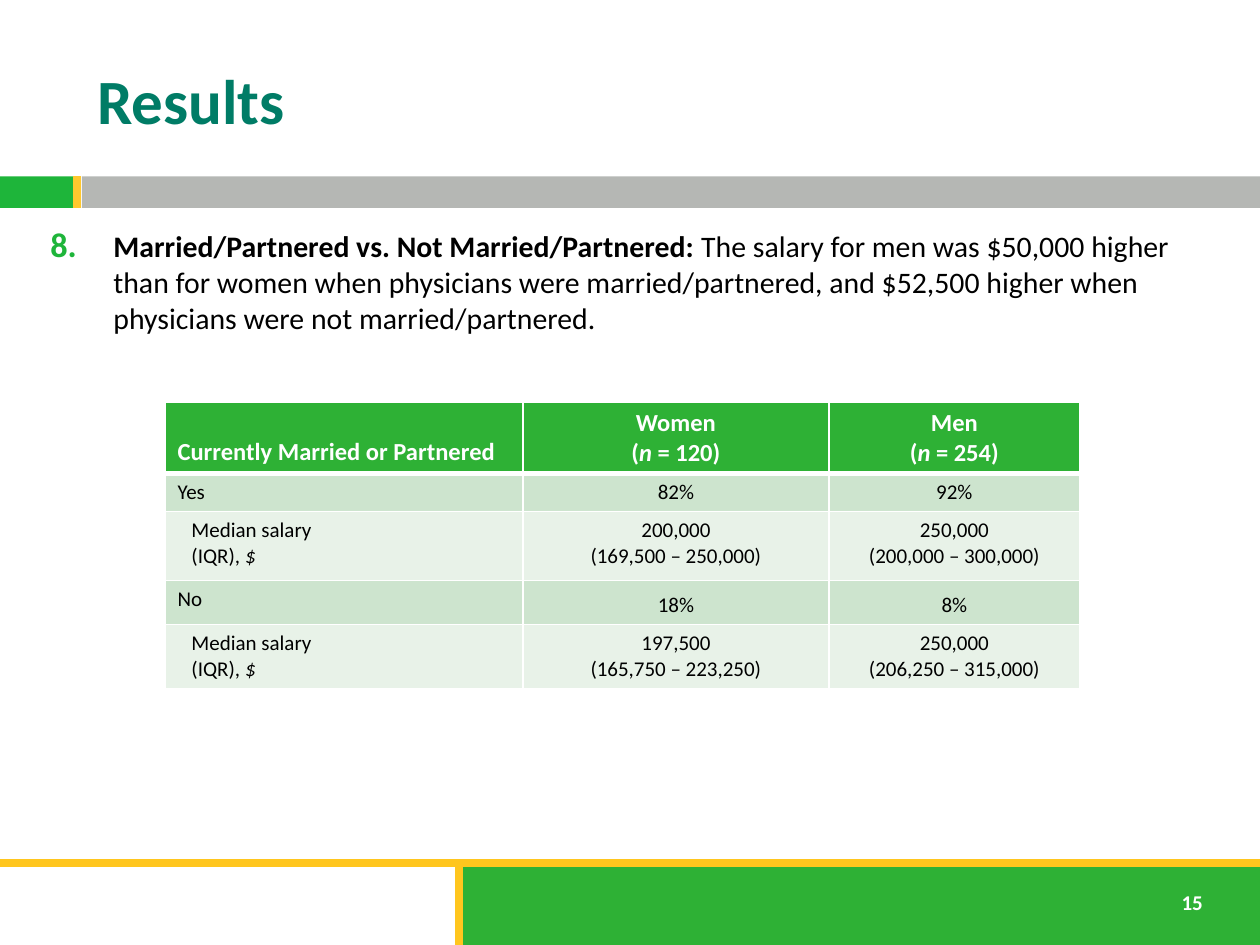
"""Build the results slide on salary by partner status."""
from dataclasses import dataclass
from typing import Any

from lxml.etree import SubElement
from pptx import Presentation
from pptx.dml.color import RGBColor
from pptx.enum.shapes import MSO_CONNECTOR, MSO_SHAPE
from pptx.enum.text import MSO_ANCHOR, MSO_AUTO_SIZE, PP_ALIGN
from pptx.oxml.ns import qn
from pptx.util import Inches, Pt

GREEN, LIME, GOLD, AMBER = "2EB135", "1EB53A", "FFC61E", "FFC82E"
GRAY, TEAL, WHITE, BLACK = "B5B7B4", "007C66", "FFFFFF", "000000"
MINT, PALE = "CDE4CE", "E8F2E8"
HEAD = {"name": "Calibri", "size": Pt(14), "bold": True, "color": WHITE}
CELL = {"name": "Calibri", "size": Pt(12), "bold": False, "color": BLACK}
TITLE = {"name": "Calibri", "size": Pt(36), "bold": True, "color": TEAL}
LEAD = {"name": "Calibri", "size": Pt(17), "bold": True, "color": BLACK}
PAGE = {**HEAD, "size": Pt(12)}
TOP, LOW = MSO_ANCHOR.TOP, MSO_ANCHOR.BOTTOM


@dataclass
class Band:
    """A filled bar."""
    box: tuple[float, float, float, float]
    color: str


@dataclass
class Rule:
    """A straight line from one point to the next."""
    ends: tuple[float, float, float, float]
    color: str


@dataclass
class Row:
    """A table row with its look."""
    high: float
    texts: tuple[str, str, str]
    fill: str
    font: dict[str, Any]
    anchors: tuple[Any, Any, Any]
    inset: float = 0.1


BANDS = [Band((0, 1.4, 0.58, 0.25), LIME), Band((0.65, 1.4, 9.35, 0.25), GRAY),
         Band((3.62, 6.84, 6.38, 0.66), GREEN)]
RULES = [Rule((0, 6.85, 10, 6.85), GOLD), Rule((3.64, 6.86, 3.64, 7.5), GOLD),
         Rule((0.61, 1.4, 0.61, 1.65), AMBER)]
MEDIAN = "Median salary\n(IQR), *$*"
WIDTHS = (2.84, 2.43, 1.99)
ROWS = [
    Row(0.56, ("Currently Married or Partnered", "Women\n(*n* = 120)", "Men\n(*n* = 254)"),
        GREEN, HEAD, (LOW, TOP, TOP)),
    Row(0.3, ("Yes", "82%", "92%"), MINT, CELL, (TOP, LOW, LOW)),
    Row(0.55, (MEDIAN, "200,000\n(169,500 – 250,000)", "250,000\n(200,000 – 300,000)"),
        PALE, CELL, (TOP, TOP, TOP), 0.21),
    Row(0.35, ("No", "18%", "8%"), MINT, CELL, (TOP, LOW, LOW)),
    Row(0.51, (MEDIAN, "197,500\n(165,750 – 223,250)", "250,000\n(206,250 – 315,000)"),
        PALE, CELL, (TOP, TOP, TOP), 0.21),
]


def paint(target: Any, color: str) -> None:
    """Give a fill or font its colour."""
    if hasattr(target, "solid"):
        target.solid()
        target.fore_color.rgb = RGBColor.from_string(color)
    else:
        target.color.rgb = RGBColor.from_string(color)


def add_run(para: Any, text: str, form: dict[str, Any]) -> None:
    """Add a run in the given format."""
    run = para.add_run()
    run.text = text
    for name, value in form.items():
        if name == "color":
            paint(run.font, value)
        else:
            setattr(run.font, name, value)


def place(shape: Any, box: tuple[float, ...]) -> None:
    """Move and size a shape."""
    for name, value in zip(("left", "top", "width", "height"), box):
        setattr(shape, name, Inches(value))


def draw_band(slide: Any, band: Band) -> None:
    """Draw a filled bar."""
    shape = slide.shapes.add_shape(MSO_SHAPE.RECTANGLE, *map(Inches, band.box))
    shape.shadow.inherit = False
    shape.line.fill.background()
    paint(shape.fill, band.color)


def draw_rule(slide: Any, rule: Rule) -> None:
    """Draw a thick line."""
    line = slide.shapes.add_connector(MSO_CONNECTOR.STRAIGHT, *map(Inches, rule.ends))
    line.line.width = Pt(4.5)
    paint(line.line.fill, rule.color)
    SubElement(line._element.spPr, qn("a:effectLst"))


def add_edges(cell: Any, index: int) -> None:
    """Add white cell borders, thick below the head row."""
    thick = {0: "lnB", 1: "lnT"}.get(index)
    for side in ("lnL", "lnR", "lnT", "lnB"):
        width = Pt(3 if side == thick else 1)
        edge = SubElement(cell._tc.get_or_add_tcPr(), qn(f"a:{side}"), w=str(width))
        SubElement(SubElement(edge, qn("a:solidFill")), qn("a:srgbClr"), val=WHITE)


def fill_cell(cell: Any, row: Row, index: int, col: int) -> None:
    """Write and style one cell, with starred parts in italics."""
    add_edges(cell, index)
    paint(cell.fill, row.fill)
    cell.vertical_anchor = row.anchors[col]
    cell.margin_left = Inches(0.1 if col else row.inset)
    frame = cell.text_frame
    for num, line in enumerate(row.texts[col].split("\n")):
        para = frame.add_paragraph() if num else frame.paragraphs[0]
        para.alignment = PP_ALIGN.CENTER if col else PP_ALIGN.LEFT
        for part, text in enumerate(line.split("*")):
            if text:
                add_run(para, text, {**row.font, "italic": part % 2 == 1})


def draw_table(slide: Any) -> None:
    """Draw the salary table."""
    box = (1.31, 3.19, sum(WIDTHS), sum(row.high for row in ROWS))
    table = slide.shapes.add_table(len(ROWS), len(WIDTHS), *map(Inches, box)).table
    for col, width in zip(table.columns, WIDTHS):
        col.width = Inches(width)
    for index, row in enumerate(ROWS):
        table.rows[index].height = Inches(row.high)
        for col in range(len(WIDTHS)):
            fill_cell(table.cell(index, col), row, index, col)


def write_title(slide: Any) -> None:
    """Write the slide title."""
    title = slide.shapes.title
    place(title, (0.67, 0.25, 8.92, 1.08))
    title.text_frame.vertical_anchor = MSO_ANCHOR.MIDDLE
    para = title.text_frame.paragraphs[0]
    para.alignment = PP_ALIGN.LEFT
    add_run(para, "Results", TITLE)


def write_body(slide: Any) -> None:
    """Write the numbered finding."""
    body = slide.placeholders[1]
    place(body, (0.3, 1.76, 9.29, 0.96))
    body.text_frame.auto_size = MSO_AUTO_SIZE.NONE
    para = body.text_frame.paragraphs[0]
    para.space_before = Pt(0)
    props = para._p.get_or_add_pPr()
    props.set("marL", str(Inches(0.5)))
    props.set("indent", str(Inches(-0.5)))
    SubElement(SubElement(props, qn("a:buClr")), qn("a:srgbClr"), val=LIME)
    SubElement(props, qn("a:buSzPct"), val="115000")
    SubElement(props, qn("a:buFont"), typeface="Calibri")
    SubElement(props, qn("a:buAutoNum"), type="arabicPeriod", startAt="8")
    add_run(para, "Married/Partnered vs. Not Married/Partnered: ", LEAD)
    add_run(para, "The salary for men was $50,000 higher than for women when physicians "
            "were married/partnered, and $52,500 higher when physicians were not "
            "married/partnered.", {**LEAD, "bold": False})


def write_page(slide: Any) -> None:
    """Write the page number."""
    box = slide.shapes.add_textbox(*map(Inches, (9.28, 7.01, 0.4, 0.3)))
    box.text_frame.word_wrap = False
    add_run(box.text_frame.paragraphs[0], "15", PAGE)


def main() -> None:
    """Build and save the deck."""
    deck = Presentation()
    deck.slide_width, deck.slide_height = Inches(10), Inches(7.5)
    slide = deck.slides.add_slide(deck.slide_layouts[1])
    for band in BANDS:
        draw_band(slide, band)
    for rule in RULES:
        draw_rule(slide, rule)
    for write in (write_page, write_title, draw_table, write_body):
        write(slide)
    deck.save("out.pptx")


if __name__ == "__main__":
    main()
